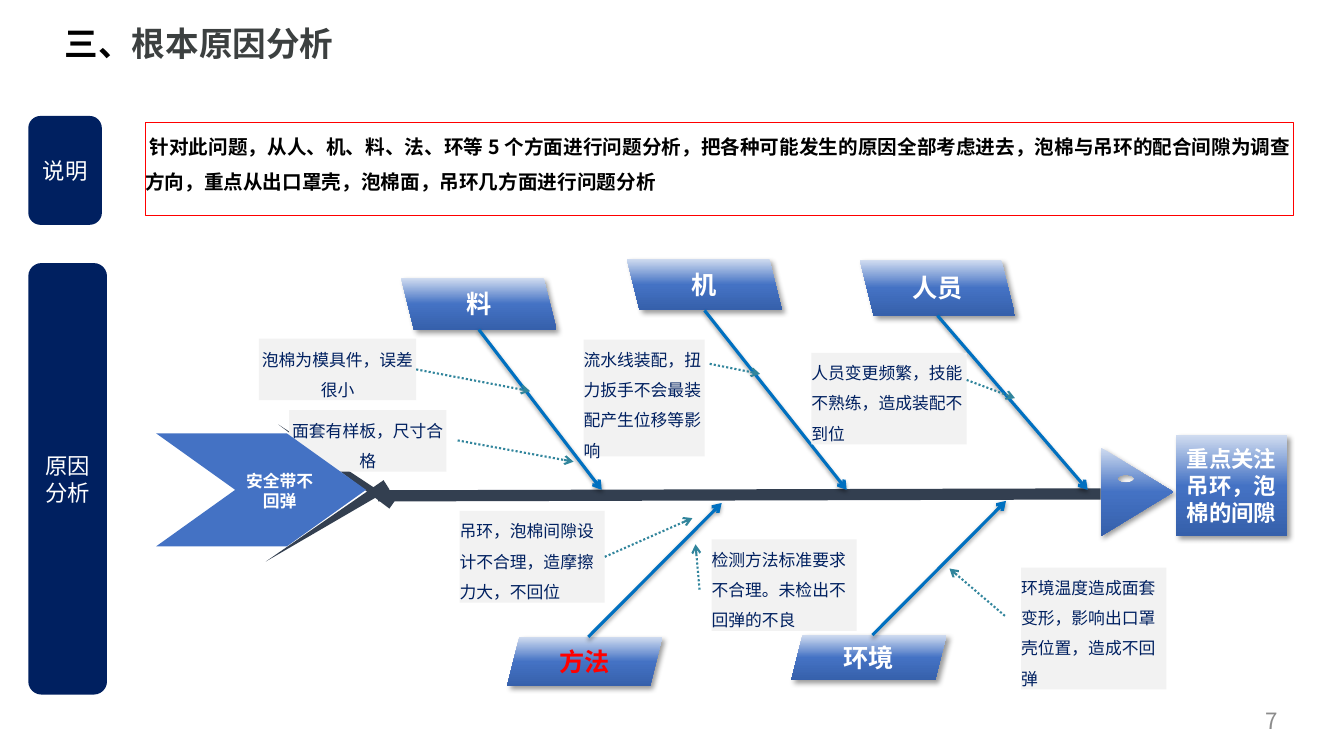
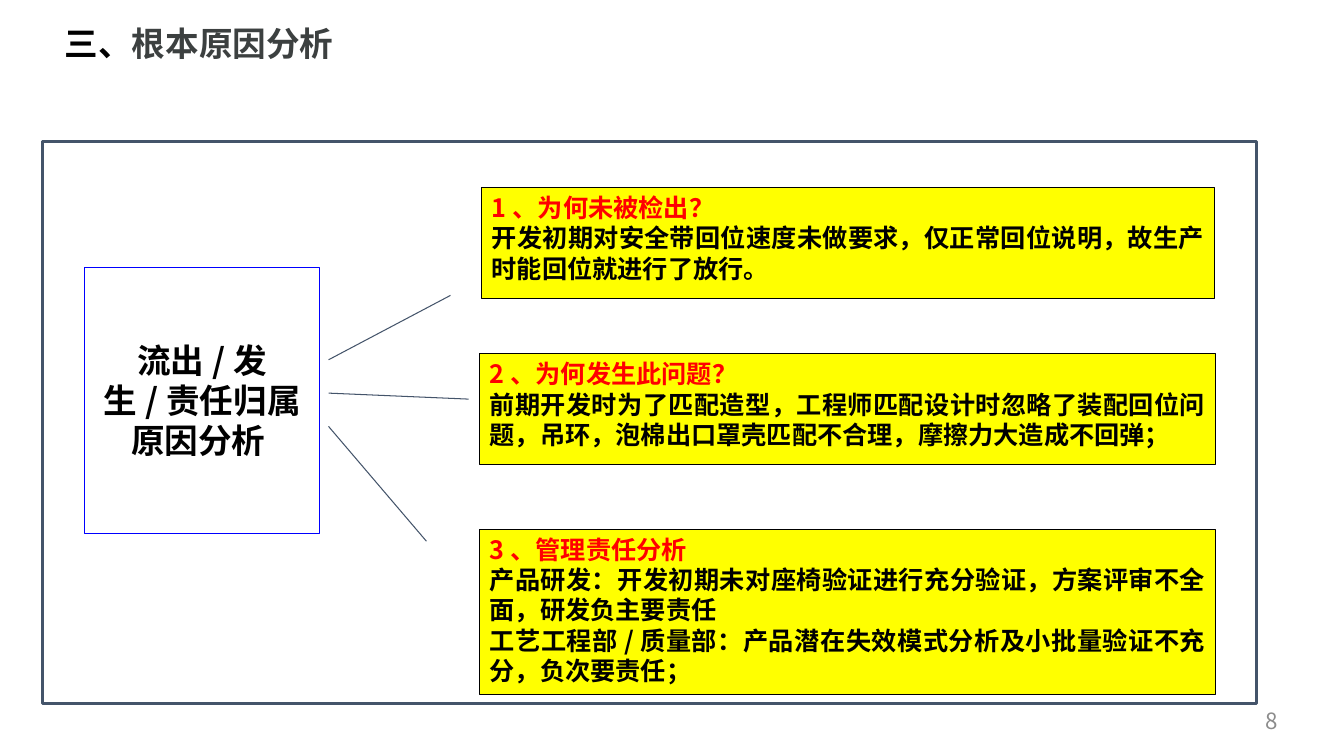
import copy
import math
from dataclasses import dataclass
from typing import NamedTuple, Optional

import pptx
import pptx.util
from lxml import etree
from pptx.dml.color import RGBColor
from pptx.enum.dml import MSO_LINE
from pptx.enum.shapes import MSO_CONNECTOR, MSO_SHAPE
from pptx.enum.text import MSO_ANCHOR, MSO_AUTO_SIZE, PP_ALIGN
from pptx.oxml.ns import qn

Pt = pptx.util.Pt


@dataclass(frozen=True)
class Theme:
    font: str = "Noto Sans CJK SC"
    black: str = "000000"
    white: str = "FFFFFF"
    red: str = "FF0000"
    yellow: str = "FFFF00"
    title: str = "3C4040"
    number: str = "8C8C8C"
    navy: str = "002060"
    slate: str = "333F50"
    frame: str = "44546A"
    core: str = "0000FF"
    blue: str = "4472C4"
    bone: str = "0070C0"
    pointer: str = "31859C"
    label: str = "F2F2F2"
    gradient: tuple = ((0, "D0DCF0"), (0.5, "4472C4"), (1, "3660AB"))
    title_size: float = 24
    head_size: float = 18
    panel_size: float = 16
    note_size: float = 14
    label_size: float = 12


T = Theme()


class Run(NamedTuple):
    text: str
    color: str


class Box(NamedTuple):
    x: float
    y: float
    w: float
    h: float


class Point(NamedTuple):
    x: float
    y: float


class Shadow(NamedTuple):
    alpha: int
    blur: float
    dist: float
    angle: int


@dataclass(frozen=True)
class Branch:
    text: str
    x: float
    y: float
    h: float
    tip: Point
    above: bool = True
    color: str = T.white


@dataclass(frozen=True)
class Cause:
    """A cause label; its pointer leaves the right side unless start is given."""
    text: str
    box: Box
    end: Point
    start: Optional[Point] = None
    centered: bool = False


@dataclass(frozen=True)
class Finding:
    box: Box
    heading: str
    lines: tuple
    line_start: Point
    line_end: Point


BLOCK_SHADOW = Shadow(40, 4, 3, 45)
BONE_SHADOW = Shadow(38, 3.1, 1.6, 90)
BRANCH_W = 110.9

BRANCHES = (
    Branch("人员", 614.2, 185.8, 39.6, Point(776.9, 349.9)),
    Branch("机", 447.8, 185, 36.7, Point(604.8, 349.9)),
    Branch("料", 286.6, 198.7, 36.7, Point(429.8, 349.9)),
    Branch("环境", 565.2, 453.6, 32.4, Point(718.6, 357.8), above=False),
    Branch("方法", 362.2, 455, 35.3, Point(515.5, 359.3), above=False, color=T.red),
)
CAUSES = (
    Cause("吊环，泡棉间隙设计不合理，造摩擦力大，不回位",
          Box(328.3, 365, 103.7, 65.5), Point(494.6, 370.1)),
    Cause("人员变更频繁，技能不熟练，造成装配不到位",
          Box(579.6, 252, 110.9, 65.5), Point(725, 284.4), Point(690.5, 271.4)),
    Cause("流水线装配，扭力扳手不会最装配产生位移等影响",
          Box(416.9, 242.6, 86.4, 83.5), Point(542.9, 267.1), Point(506.9, 259.9)),
    Cause("泡棉为模具件，误差很小",
          Box(185, 241.9, 112.3, 43.9), Point(378.7, 279.4), centered=True),
    Cause("检测方法标准要求不合理。未检出不回弹的不良",
          Box(508.3, 385.2, 103.7, 65.5), Point(496.8, 388.8), Point(499.7, 421.2)),
    Cause("面套有样板，尺寸合格",
          Box(206.6, 293, 112.3, 43.9), Point(409.7, 329.8), Point(326.9, 314.6), True),
    Cause("环境温度造成面套变形，影响出口罩壳位置，造成不回弹",
          Box(729.4, 405.4, 103.7, 87.1), Point(678.2, 406.1), Point(717.8, 439.9)),
)
FINDINGS = (
    Finding(Box(344.2, 133.9, 523.4, 79.2), "1、为何未被检出？",
            ("开发初期对安全带回位速度未做要求，仅正常回位说明，故生产时能回位就进行了放行。",),
            Point(234.7, 257), Point(321.8, 211)),
    Finding(Box(342.7, 252.7, 525.6, 79.2), "2、为何发生此问题？",
            ("前期开发时为了匹配造型，工程师匹配设计时忽略了装配回位问题，"
             "吊环，泡棉出口罩壳匹配不合理，摩擦力大造成不回弹；",),
            Point(234.7, 280.8), Point(334.8, 285.1)),
    Finding(Box(342.7, 378, 525.6, 118.1), "3、管理责任分析",
            ("产品研发：开发初期未对座椅验证进行充分验证，方案评审不全面，研发负主要责任",
             "工艺工程部/质量部：产品潜在失效模式分析及小批量验证不充分，负次要责任；"),
            Point(234.7, 304.6), Point(304.6, 386.6)),
)


def rgb(color: str) -> RGBColor:
    return RGBColor.from_string(color)


def write(sp, *paragraphs, size=T.label_size, color=T.white, bold=False,
          align=PP_ALIGN.CENTER, anchor=MSO_ANCHOR.MIDDLE, inset=True, spacing=None):
    """Fill a shape with paragraphs, each a string or a tuple of runs."""
    tf = sp.text_frame
    tf.word_wrap = True
    tf.auto_size = MSO_AUTO_SIZE.NONE
    tf.vertical_anchor = anchor
    if not inset:
        tf.margin_left = tf.margin_right = tf.margin_top = tf.margin_bottom = 0
    for i, paragraph in enumerate(paragraphs):
        p = tf.paragraphs[0] if i == 0 else tf.add_paragraph()
        p.alignment = align
        if spacing:
            p.line_spacing = spacing
        runs = (Run(paragraph, color),) if isinstance(paragraph, str) else paragraph
        for run in runs:
            r = p.add_run()
            r.text = run.text
            r.font.size = Pt(size)
            r.font.bold = bold
            r.font.color.rgb = rgb(run.color)
            r.font.name = T.font
            etree.SubElement(r.font._element, qn("a:ea"), typeface=T.font)


def add_effects(sp, shadow: Optional[Shadow] = None):
    """Give a shape its own effect list, empty or with one outer shadow."""
    effects = etree.SubElement(sp._element.spPr, qn("a:effectLst"))
    if shadow:
        outer = etree.SubElement(
            effects, qn("a:outerShdw"), blurRad=str(Pt(shadow.blur)),
            dist=str(Pt(shadow.dist)), dir=str(shadow.angle * 60000),
            algn="tl", rotWithShape="0")
        clr = etree.SubElement(outer, qn("a:srgbClr"), val=T.black)
        etree.SubElement(clr, qn("a:alpha"), val=str(shadow.alpha * 1000))


def paint(sp, fill=None, line=None, width=0.75):
    if fill:
        sp.fill.solid()
        sp.fill.fore_color.rgb = rgb(fill)
    else:
        sp.fill.background()
    if line:
        sp.line.color.rgb = rgb(line)
        sp.line.width = Pt(width)
    else:
        sp.line.fill.background()


def paint_glossy(sp):
    """Apply the three-stop vertical gradient and the block shadow."""
    sp.line.fill.background()
    sp.fill.gradient()
    sp.fill.gradient_angle = 270
    stops = sp._element.spPr.find(".//" + qn("a:gsLst"))
    stops.append(copy.deepcopy(stops[0]))
    for stop, (position, color) in zip(sp.fill.gradient_stops, T.gradient):
        stop.position = position
        stop.color.rgb = rgb(color)
    add_effects(sp, BLOCK_SHADOW)


def add_box(s, box: Box, kind=MSO_SHAPE.RECTANGLE, glossy=False, **style):
    sp = s.shapes.add_shape(kind, *map(Pt, box))
    if glossy:
        paint_glossy(sp)
    else:
        sp.shadow.inherit = False
        paint(sp, **style)
    return sp


def add_text(s, box: Box, text: str, **style):
    write(s.shapes.add_textbox(*map(Pt, box)), text, **style)


def add_line(s, start: Point, end: Point, color: str, width: float,
             arrow=False, dotted=False, shadow: Optional[Shadow] = None):
    cx = s.shapes.add_connector(MSO_CONNECTOR.STRAIGHT, *map(Pt, (*start, *end)))
    cx.line.color.rgb = rgb(color)
    cx.line.width = Pt(width)
    if dotted:
        cx.line.dash_style = MSO_LINE.ROUND_DOT
    if arrow:
        etree.SubElement(cx.line._get_or_add_ln(), qn("a:tailEnd"), type="arrow")
    add_effects(cx, shadow)
    return cx


def add_page(prs, number: int):
    s = prs.slides.add_slide(prs.slide_layouts[5])
    title = s.shapes.title
    title.left, title.top, title.width, title.height = map(Pt, (39, 13, 798, 94))
    write(title, (Run("三、", T.black), Run("根本原因分析", T.title)), size=T.title_size,
          bold=True, align=PP_ALIGN.LEFT, anchor=MSO_ANCHOR.TOP)
    add_text(s, Box(704.2, 500.4, 216, 28.8), str(number), size=T.panel_size,
             color=T.number, align=PP_ALIGN.RIGHT)
    return s


def add_panel(s, box: Box, text: str):
    write(add_box(s, box, MSO_SHAPE.ROUNDED_RECTANGLE, fill=T.navy), text, size=T.panel_size)


def add_fish_head(s):
    left, top, tip, mid, bottom = 786.2, 319.7, 838.1, 351.4, 383
    eye, rx, ry, steps = Point(804.2, 342), 6.1, 2.9, 32
    ring = [(Pt(eye.x + rx * math.cos(a)), Pt(eye.y - ry * math.sin(a)))
            for a in (2 * math.pi * i / steps for i in range(steps))]
    fb = s.shapes.build_freeform(Pt(left), Pt(top))
    fb.add_line_segments([(Pt(tip), Pt(mid)), (Pt(left), Pt(bottom))], close=True)
    fb.move_to(*ring[0])
    fb.add_line_segments(ring[1:], close=True)
    paint_glossy(fb.convert_to_shape())


def add_branch(s, branch: Branch):
    sp = add_box(s, Box(branch.x, branch.y, BRANCH_W, branch.h),
                 MSO_SHAPE.PARALLELOGRAM, glossy=True)
    if branch.above:
        sp._element.spPr.xfrm.set("flipH", "1")
        start = Point(branch.x + BRANCH_W / 2, branch.y + branch.h)
    else:
        start = Point(branch.x + 58, branch.y)
    write(sp, branch.text, size=T.head_size, color=branch.color, bold=True)
    add_line(s, start, branch.tip, T.bone, 2.25, arrow=True, shadow=BONE_SHADOW)


def add_cause(s, cause: Cause):
    sp = add_box(s, cause.box, fill=T.label)
    style = {} if cause.centered else dict(align=PP_ALIGN.LEFT, anchor=MSO_ANCHOR.TOP)
    write(sp, cause.text, color=T.navy, inset=False, spacing=1.5, **style)
    box = cause.box
    start = cause.start or Point(box.x + box.w, box.y + box.h / 2)
    cx = add_line(s, start, cause.end, T.pointer, 1.5, arrow=True, dotted=True)
    if cause.start is None:
        cx.begin_connect(sp, 3)


def build_fishbone(prs):
    s = add_page(prs, 7)
    note = add_box(s, Box(103.7, 87.8, 820.1, 66.2), line=T.red)
    write(note, " 针对此问题，从人、机、料、法、环等5个方面进行问题分析，把各种可能发生的原因全部考虑进去，"
          "泡棉与吊环的配合间隙为调查方向，重点从出口罩壳，泡棉面，吊环几方面进行问题分析",
          size=T.note_size, color=T.black, bold=True, align=PP_ALIGN.LEFT,
          anchor=MSO_ANCHOR.TOP, inset=False, spacing=1.5)
    add_panel(s, Box(20.2, 187.9, 56.2, 308.2), "原因分析")
    add_panel(s, Box(20.2, 82.8, 52.6, 77.8), "说明")
    add_fish_head(s)
    add_line(s, Point(786.2, 352.8), Point(270, 354.2), T.slate, 8)
    for box, angle in ((Box(236.2, 282.2, 6.5, 99.4), 305.3),
                       (Box(229, 322.6, 7.9, 102.2), 237.6)):
        add_box(s, box, MSO_SHAPE.ISOSCELES_TRIANGLE, fill=T.slate).rotation = angle
    for branch in BRANCHES:
        add_branch(s, branch)
    for cause in CAUSES:
        add_cause(s, cause)
    focus = add_box(s, Box(840.2, 311, 79.2, 72), glossy=True)
    write(focus, "重点关注吊环，泡棉的间隙", size=T.panel_size, bold=True)
    tail = add_box(s, Box(111.6, 309.6, 149.8, 80.6), MSO_SHAPE.CHEVRON, fill=T.blue)
    tail.adjustments[0] = 0.7
    add_text(s, Box(166.3, 322.6, 67, 55.4), "安全带不回弹", bold=True)


def build_findings(prs):
    s = add_page(prs, 8)
    add_box(s, Box(30.2, 100.8, 867.6, 401.8), line=T.frame, width=2)
    core = add_box(s, Box(60.5, 190.8, 167.8, 190), fill=T.white, line=T.core)
    write(core, "流出/发生/责任归属原因分析 ", size=T.title_size, color=T.black, bold=True)
    for finding in FINDINGS:
        add_line(s, finding.line_start, finding.line_end, T.frame, 0.75)
        card = add_box(s, finding.box, fill=T.yellow, line=T.black)
        write(card, (Run(finding.heading, T.red),), *finding.lines, size=T.head_size,
              color=T.black, bold=True, align=PP_ALIGN.JUSTIFY, anchor=MSO_ANCHOR.TOP)


def main():
    prs = pptx.Presentation()
    prs.slide_width, prs.slide_height = Pt(960), Pt(540)
    build_fishbone(prs)
    build_findings(prs)
    prs.save("out.pptx")


if __name__ == "__main__":
    main()
